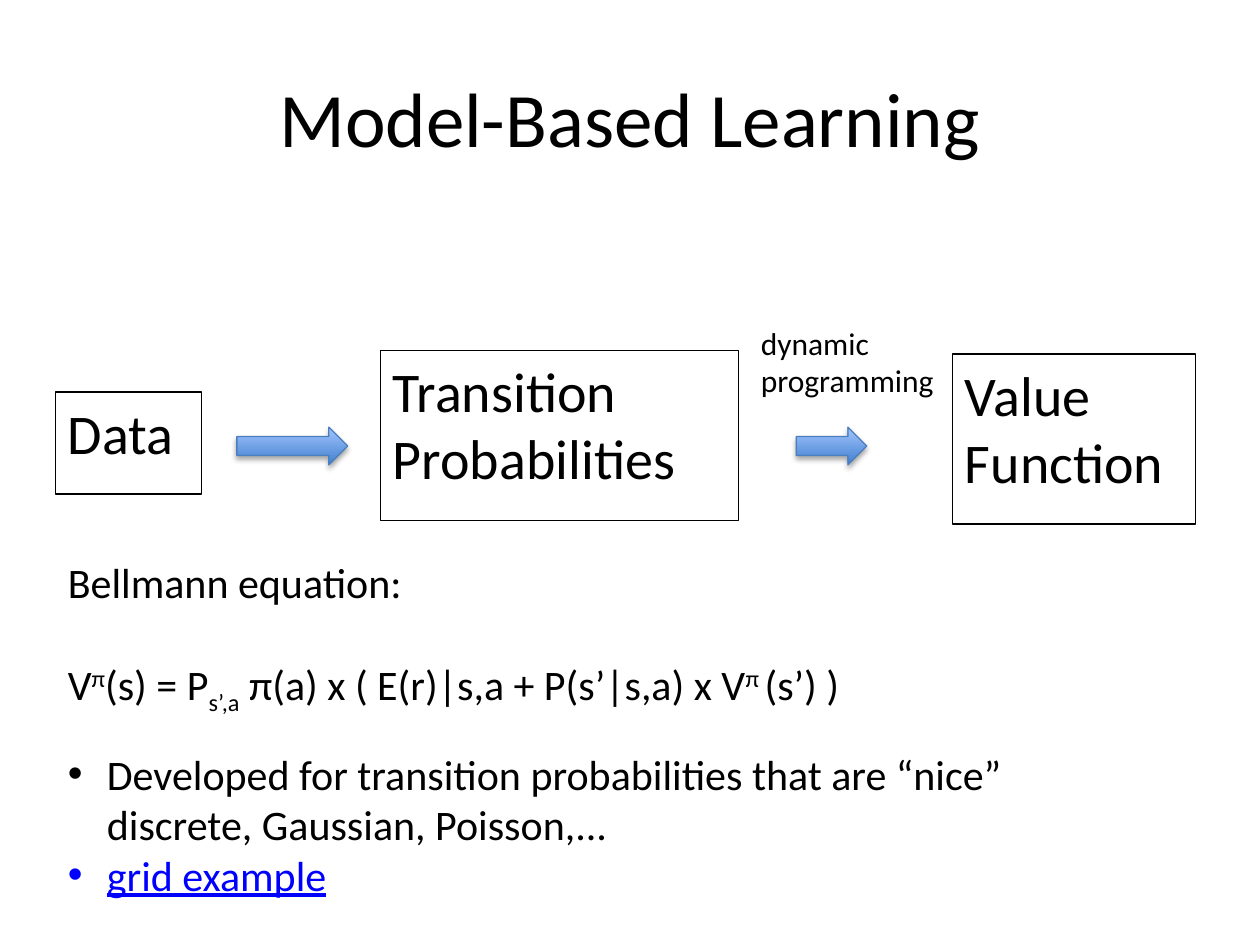
from lxml import etree
from pptx import Presentation, util as u
from pptx.dml.color import RGBColor
from pptx.enum import shapes, text
from pptx.oxml import ns

THEME = {
    "font": "Calibri", "ink": "000000", "link": "0000FF",
    "arrow": ("3F80CE", "A4C4FF"), "arrow_line": "4B7EBC", "line": 0.75,
    "title": 44, "box": 32, "body": 24, "label": 18,
}
BODY_LINE = u.Pt(29.3)

prs = Presentation()
prs.slide_width, prs.slide_height = u.Inches(10), u.Inches(7.5)


def place(left, top, width, height):
    """Turn percentages of the slide's width and height into lengths."""
    w, h = prs.slide_width / 100, prs.slide_height / 100
    return [round(n) for n in (left * w, top * h, width * w, height * h)]


def add_run(p, words, size, color="ink", **formats):
    r = p.add_run()
    r.text = words
    r.font.color.rgb = RGBColor.from_string(THEME[color])
    values = {"name": THEME["font"], "size": u.Pt(THEME[size]), **formats}
    for name, value in values.items():
        setattr(r.font, name, value)
    return r


s = prs.slides.add_slide(prs.slide_layouts[5])

# Title
title = s.shapes.title
title.left, title.top, title.width, title.height = place(5, 4, 90, 16.67)
title.text_frame.vertical_anchor = text.MSO_ANCHOR.MIDDLE
p = title.text_frame.paragraphs[0]
p.alignment = text.PP_ALIGN.CENTER
add_run(p, "Model-Based Learning", "title")

# Stages of the flow
stages = [
    ("Data", (4.4, 41.47, 11.6, 10.8)),
    ("Transition Probabilities", (30.2, 37.07, 28.4, 18)),
    ("Value Function", (75.6, 37.47, 19.3, 18)),
]
for words, spot in stages:
    sp = s.shapes.add_shape(shapes.MSO_SHAPE.RECTANGLE, *place(*spot))
    sp.shadow.inherit = False
    sp.fill.background()
    sp.line.color.rgb = RGBColor.from_string(THEME["ink"])
    sp.line.width = u.Pt(THEME["line"])
    tf = sp.text_frame
    tf.word_wrap, tf.vertical_anchor = True, text.MSO_ANCHOR.TOP
    p = tf.paragraphs[0]
    p.alignment, p.space_before = text.PP_ALIGN.LEFT, u.Pt(3)
    add_run(p, words, "box")

# Arrows between the stages
for left, width in [(18.8, 8.8), (63.2, 5.6)]:
    sp = s.shapes.add_shape(shapes.MSO_SHAPE.RIGHT_ARROW,
                            *place(left, 45.2, width, 4))
    sp.fill.gradient()
    sp.fill.gradient_angle = 90
    for stop, color in zip(sp.fill.gradient_stops, THEME["arrow"]):
        stop.color.rgb = RGBColor.from_string(color)
    sp.line.color.rgb = RGBColor.from_string(THEME["arrow_line"])
    sp.line.width = u.Pt(THEME["line"])
    sp.shadow.inherit = False
    effects = sp._element.spPr.find(ns.qn("a:effectLst"))
    shadow = etree.SubElement(
        effects, ns.qn("a:outerShdw"), blurRad=str(u.Pt(3.1)),
        dist=str(u.Pt(1.8)), dir="5400000", rotWithShape="0")
    shade = etree.SubElement(shadow, ns.qn("a:srgbClr"), val=THEME["ink"])
    etree.SubElement(shade, ns.qn("a:alpha"), val="35000")

# Text boxes
frames = []
for spot in [(59.4, 33.6, 17.1, 9.47), (4.4, 58.27, 88.2, 17.47),
             (4.4, 78.53, 90.5, 17.47)]:
    tf = s.shapes.add_textbox(*place(*spot)).text_frame
    tf.word_wrap = True
    frames.append(tf)
label, equation, notes = frames

add_run(label.paragraphs[0], "dynamic programming", "label")

# Bellmann equation, each part with its baseline shift in percent
add_run(equation.paragraphs[0], "Bellmann equation:", "body")
p = equation.add_paragraph()
p.space_before = BODY_LINE
parts = [("V", 0), ("π", 30), ("(s) = P", 0), ("s’,a", -25),
         (" π(a) x ( E(r)|s,a + P(s’|s,a) x V", 0), ("π ", 30), ("(s’) )", 0)]
for words, shift in parts:
    r = add_run(p, words, "body")
    if shift:
        r._r.get_or_add_rPr().set("baseline", str(shift * 1000))

# Bulleted notes
p = notes.paragraphs[0]
add_run(p, "Developed for transition probabilities that are “nice”", "body")
p.add_line_break()
add_run(p, "discrete, Gaussian, Poisson,...", "body")
add_run(notes.add_paragraph(), "grid example", "body", "link", underline=True)
for p in notes.paragraphs:
    pPr = p._p.get_or_add_pPr()
    pPr.set("marL", str(u.Inches(0.31)))
    pPr.set("indent", str(-u.Inches(0.31)))
    etree.SubElement(pPr, ns.qn("a:buFont"), typeface="Arial")
    etree.SubElement(pPr, ns.qn("a:buChar"), char="•")

prs.save("out.pptx")
